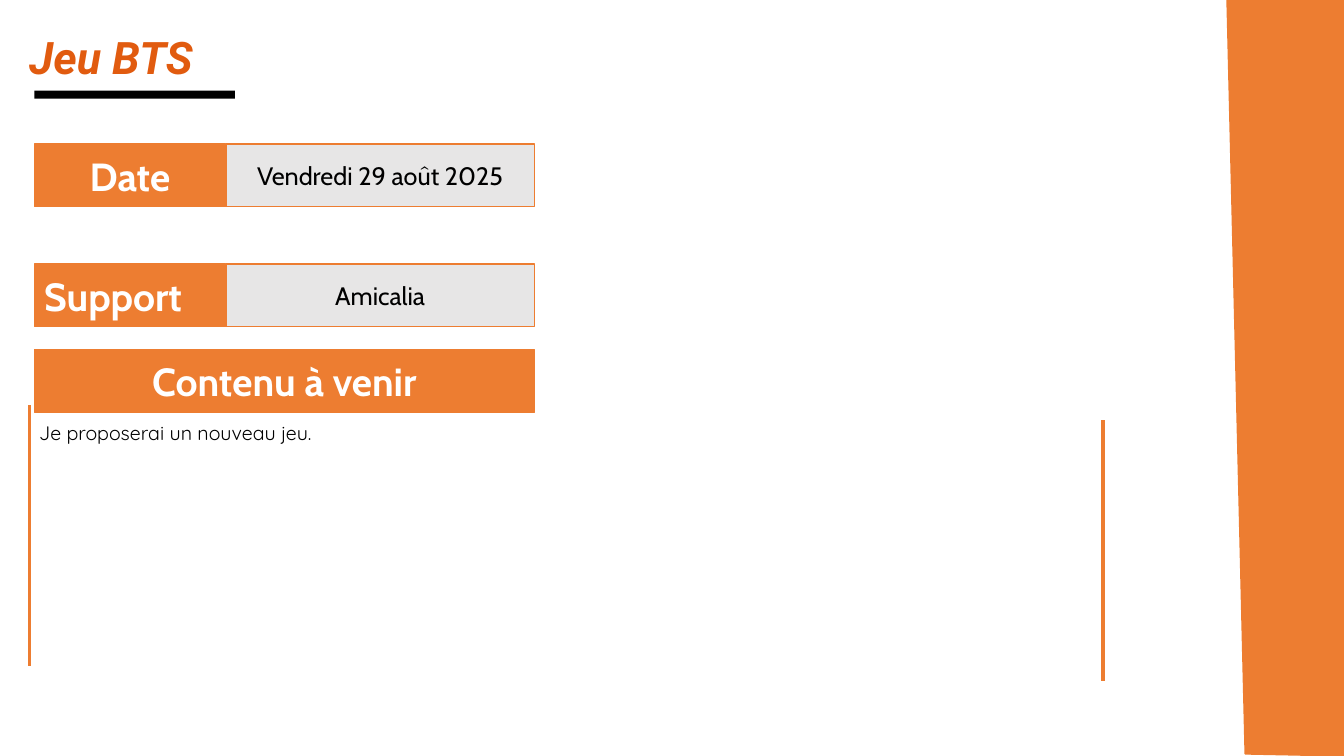
from pptx import Presentation
from pptx.dml.color import RGBColor
from pptx.enum.shapes import MSO_CONNECTOR, MSO_SHAPE
from pptx.enum.text import MSO_ANCHOR, PP_ALIGN
from pptx.oxml.ns import qn
from pptx.util import Inches, Pt
from lxml import etree

RECT = MSO_SHAPE.RECTANGLE
STRAIGHT = MSO_CONNECTOR.STRAIGHT
MIDDLE, TOP = MSO_ANCHOR.MIDDLE, MSO_ANCHOR.TOP
LEFT, CENTER, JUSTIFY = PP_ALIGN.LEFT, PP_ALIGN.CENTER, PP_ALIGN.JUSTIFY

ORANGE, TITLE_ORANGE = "ED7D31", "E15B0F"
GREY, BLACK, WHITE = "E7E6E6", "000000", "FFFFFF"

MARGIN = 0.34
LABEL_W, VALUE_W, ROW_H = 1.9, 3.06, 0.62


def rgb(value):
    return RGBColor.from_string(value)


def paint(sp, fill, line=None):
    sp.shadow.inherit = False
    sp.fill.solid()
    sp.fill.fore_color.rgb = rgb(fill)
    if line:
        sp.line.color.rgb = rgb(line)
        sp.line.width = Pt(1)
    else:
        sp.line.fill.background()


def write(sp, text, size, font, color, align=LEFT, anchor=TOP, bold=False, italic=False):
    tf = sp.text_frame
    tf.word_wrap = True
    tf.vertical_anchor = anchor
    p = tf.paragraphs[0]
    p.alignment = align
    r = p.add_run()
    r.text = text
    r.font.size = Pt(size)
    r.font.name = font
    r.font.bold = bold
    r.font.italic = italic
    r.font.color.rgb = rgb(color)


def add_rect(s, x, y, w, h, fill, line=None):
    sp = s.shapes.add_shape(RECT, Inches(x), Inches(y), Inches(w), Inches(h))
    paint(sp, fill, line)
    return sp


def add_label(s, x, y, w, text, align=CENTER):
    sp = add_rect(s, x, y, w, ROW_H, ORANGE, ORANGE)
    write(sp, text, 28, "Cabin", WHITE, align, MIDDLE, bold=True)


def add_row(s, y, label, value, align=CENTER):
    add_label(s, MARGIN, y, LABEL_W, label, align)
    sp = add_rect(s, MARGIN + LABEL_W, y, VALUE_W, ROW_H, GREY, ORANGE)
    write(sp, value, 18, "Cabin", BLACK, CENTER, MIDDLE)


def add_rule(s, x, y, length):
    sp = s.shapes.add_connector(STRAIGHT, Inches(x), Inches(y), Inches(x), Inches(y + length))
    sp.line.color.rgb = rgb(ORANGE)
    sp.line.width = Pt(2.25)
    etree.SubElement(sp._element.spPr, qn("a:effectLst"))


def add_text(s, x, y, w, h, text, size, font, color, **style):
    sp = s.shapes.add_textbox(Inches(x), Inches(y), Inches(w), Inches(h))
    write(sp, text, size, font, color, **style)


def add_side_band(s):
    points = [(Inches(x), Inches(y)) for x, y in
              [(12.17, 0), (13.33, 0), (13.34, 7.5), (12.35, 7.48)]]
    builder = s.shapes.build_freeform(*points[0])
    builder.add_line_segments(points[1:], close=True)
    paint(builder.convert_to_shape(), ORANGE, ORANGE)


def main():
    prs = Presentation()
    prs.slide_width, prs.slide_height = Inches(13.33), Inches(7.5)
    s = prs.slides.add_slide(prs.slide_layouts[6])

    # Side band and title underline
    add_side_band(s)
    add_rect(s, MARGIN, 0.9, 1.99, 0.08, BLACK)

    # Date and channel
    add_row(s, 1.43, "Date", "Vendredi 29 août 2025")
    add_row(s, 2.62, "Support", "Amicalia", LEFT)

    # Upcoming content, between two vertical rules
    add_rule(s, 0.29, 4.02, 2.59)
    add_label(s, MARGIN, 3.47, LABEL_W + VALUE_W, "Contenu à venir")
    add_rule(s, 10.94, 4.17, 2.59)
    add_text(s, 0.29, 4.13, 10.56, 0.57, "Je proposerai un nouveau jeu.",
             14, "Quicksand", BLACK)

    # Title
    add_text(s, 0.19, 0.25, 11.03, 0.52, "Jeu BTS", 32, "Roboto", TITLE_ORANGE,
             align=JUSTIFY, bold=True, italic=True)

    prs.save("out.pptx")


if __name__ == "__main__":
    main()
